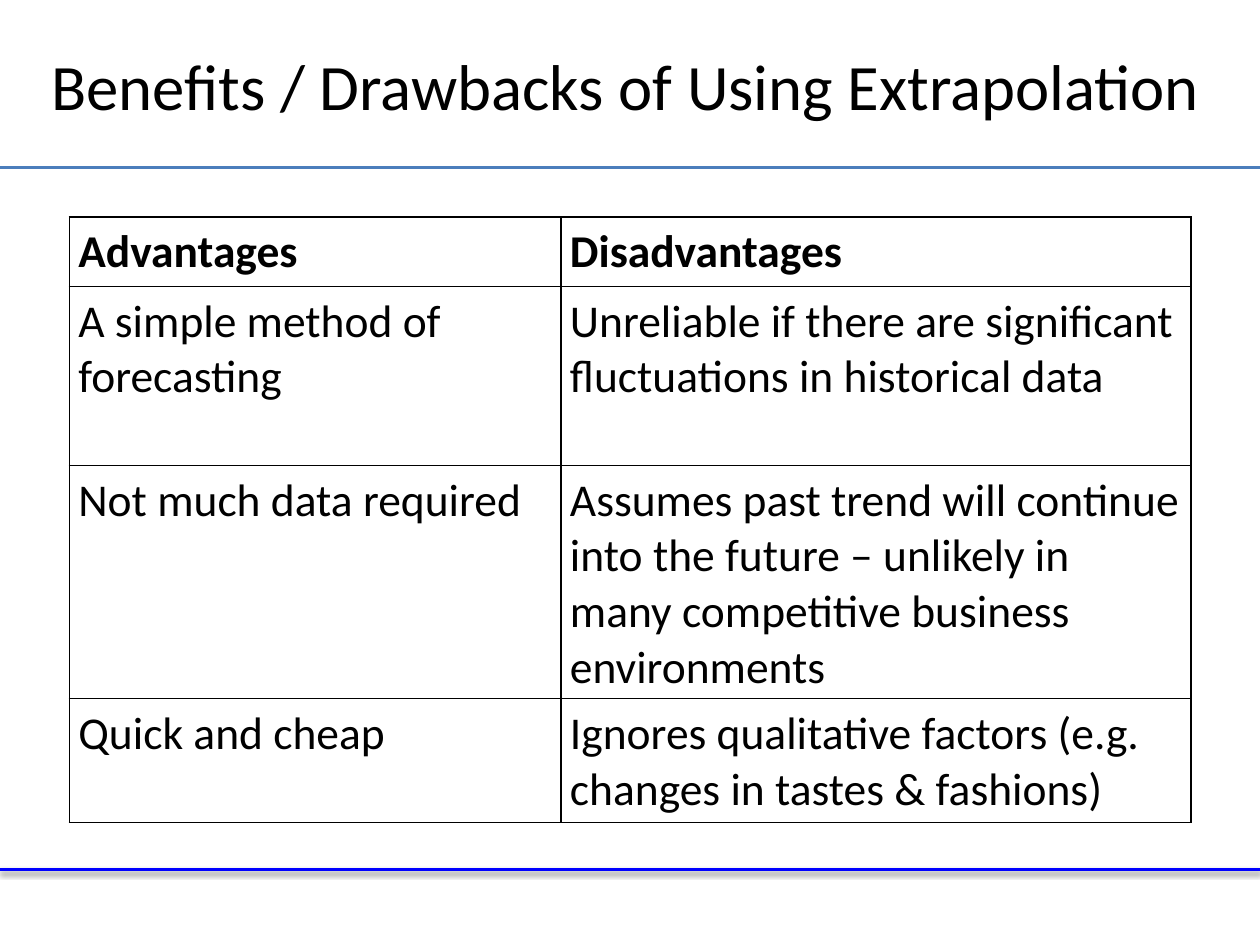
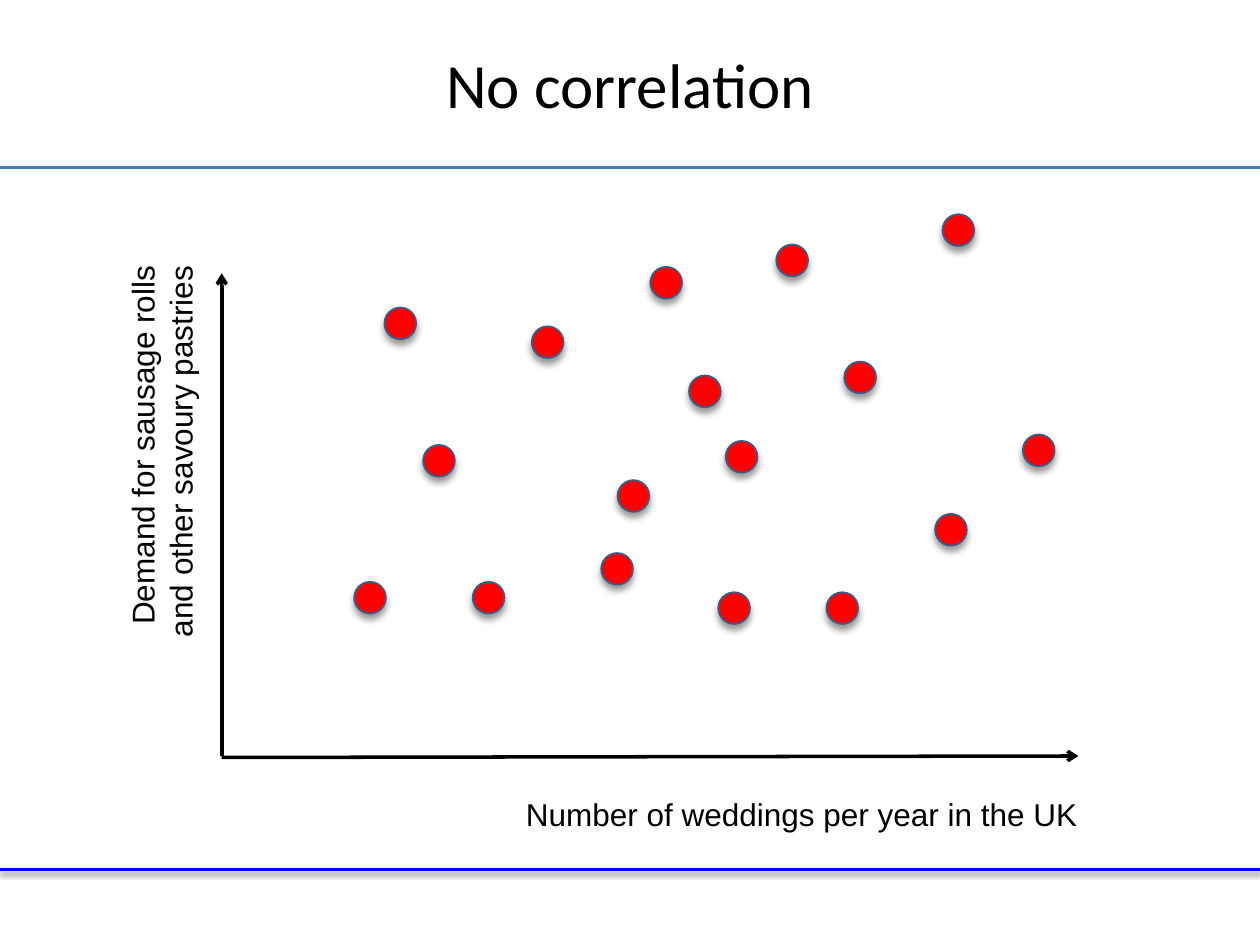
from lxml import etree
from pptx import Presentation
from pptx.dml.color import RGBColor
from pptx.enum.shapes import MSO_CONNECTOR, MSO_SHAPE
from pptx.enum.text import MSO_ANCHOR as Anchor, PP_ALIGN as Align
from pptx.oxml import parse_xml
from pptx.oxml.ns import nsdecls, qn
from pptx.util import Cm, Pt

COLORS = {
    "background": "FFFFFF",
    "text": "000000",
    "title_rule": "4B7EBC",
    "footer_rule": "0000FF",
    "dot": "FF0000",
    "dot_edge": "385D8A",
}
WIDTH, HEIGHT = 25.4, 19.05


def color(name):
    return RGBColor.from_string(COLORS[name])


class Deck:
    """Holds the shared style and the slide being filled; lengths are in cm."""

    heading_font = "Calibri"
    label_font = "Arial"

    def __init__(self):
        self.presentation = Presentation()
        self.presentation.slide_width = Cm(WIDTH)
        self.presentation.slide_height = Cm(HEIGHT)
        self.slide = None

    def new_slide(self, title, title_box, title_size):
        layout = self.presentation.slide_layouts[6]
        self.slide = self.presentation.slides.add_slide(layout)
        background = self.slide.background.fill
        background.solid()
        background.fore_color.rgb = color("background")
        self.line((0, 17.53), (WIDTH, 17.53), "footer_rule", 2,
                  shadow=(38, 3.1, 1.6))
        self.line((0, 3.38), (WIDTH, 3.38), "title_rule", 1.75)
        self.text(title, title_box, title_size, self.heading_font,
                  Align.CENTER, Anchor.MIDDLE)

    def set_effects(self, shape, shadow=None):
        """Replace inherited effects; shadow is (opacity %, blur pt, distance pt)."""
        properties = shape._element.spPr
        for old in properties.findall(qn("a:effectLst")):
            properties.remove(old)
        effects = etree.SubElement(properties, qn("a:effectLst"))
        if shadow:
            opacity, blur, distance = shadow
            effects.append(parse_xml(
                f'<a:outerShdw {nsdecls("a")} blurRad="{Pt(blur)}" '
                f'dist="{Pt(distance)}" dir="5400000" rotWithShape="0">'
                f'<a:srgbClr val="000000"><a:alpha val="{opacity * 1000}"/>'
                '</a:srgbClr></a:outerShdw>'))

    def line(self, start, end, color_name, width, shadow=None, arrow=False):
        connector = self.slide.shapes.add_connector(
            MSO_CONNECTOR.STRAIGHT, *map(Cm, start + end))
        connector.line.color.rgb = color(color_name)
        connector.line.width = Pt(width)
        if arrow:
            outline = connector._element.spPr.find(qn("a:ln"))
            etree.SubElement(outline, qn("a:tailEnd"), type="arrow")
        self.set_effects(connector, shadow)

    def style(self, paragraph, size, font_name, bold=False):
        font = paragraph.font
        font.size, font.name, font.bold = Pt(size), font_name, bold
        font.color.rgb = color("text")

    def text(self, words, box, size, font_name, align,
             anchor=Anchor.TOP, rotation=0):
        shape = self.slide.shapes.add_textbox(*map(Cm, box))
        shape.rotation = rotation
        frame = shape.text_frame
        frame.word_wrap = True
        frame.vertical_anchor = anchor
        paragraph = frame.paragraphs[0]
        paragraph.text = words
        paragraph.alignment = align
        self.style(paragraph, size, font_name)

    def border(self, cell):
        properties = cell._tc.get_or_add_tcPr()
        for index, side in enumerate("LRTB"):
            properties.insert(index, parse_xml(
                f'<a:ln{side} {nsdecls("a")} w="{Pt(1)}"><a:solidFill>'
                f'<a:srgbClr val="{COLORS["text"]}"/></a:solidFill></a:ln{side}>'))

    def table(self, left, top, column_widths, row_heights, rows):
        table = self.slide.shapes.add_table(
            len(rows), len(column_widths), Cm(left), Cm(top),
            Cm(sum(column_widths)), Cm(sum(row_heights))).table
        table.first_row = table.horz_banding = False
        for column, width in zip(table.columns, column_widths):
            column.width = Cm(width)
        for row_index, (row, height, words) in enumerate(
                zip(table.rows, row_heights, rows)):
            row.height = Cm(height)
            for cell, cell_text in zip(row.cells, words):
                cell.text = cell_text
                cell.margin_left = cell.margin_right = Cm(0.18)
                cell.margin_top = cell.margin_bottom = Cm(0.15)
                cell.fill.background()
                self.border(cell)
                self.style(cell.text_frame.paragraphs[0], 26,
                           self.heading_font, bold=row_index == 0)

    def dot(self, left, top, size=0.64):
        shape = self.slide.shapes.add_shape(
            MSO_SHAPE.OVAL, Cm(left), Cm(top), Cm(size), Cm(size))
        shape.fill.solid()
        shape.fill.fore_color.rgb = color("dot")
        shape.line.color.rgb = color("dot_edge")
        shape.line.width = Pt(1)
        self.set_effects(shape, (40, 4, 3))


def add_extrapolation_slide(deck):
    deck.new_slide("Benefits / Drawbacks of Using Extrapolation",
                   (0.2, 0.41, 24.82, 2.59), 37)
    deck.table(1.4, 4.37, (9.91, 12.7), (1.4, 3.61, 4.7, 2.49), [
        ("Advantages", "Disadvantages"),
        ("A simple method of forecasting",
         "Unreliable if there are significant fluctuations in historical data"),
        ("Not much data required",
         "Assumes past trend will continue into the future – unlikely in many "
         "competitive business environments"),
        ("Quick and cheap",
         "Ignores qualitative factors (e.g. changes in tastes & fashions)"),
    ])


def add_correlation_slide(deck):
    deck.new_slide("No correlation", (1.27, 0.2, 22.86, 2.97), 36)
    deck.line((4.47, 15.24), (4.47, 5.51), "text", 2, arrow=True)
    deck.line((4.47, 15.27), (21.74, 15.24), "text", 2, arrow=True)
    deck.text("Demand for sausage rolls and other savoury pastries",
              (-1.09, 8.56, 8.7, 1.8), 18, deck.label_font, Align.RIGHT,
              rotation=270)
    deck.text("Number of weddings per year in the UK",
              (9.09, 15.9, 12.88, 1.02), 18, deck.label_font, Align.RIGHT)
    observations = [
        (20.62, 8.76), (8.53, 8.97), (19, 4.32), (13.89, 7.57),
        (12.12, 11.15), (13.11, 5.38), (7.14, 11.73), (10.72, 6.58),
        (15.65, 4.93), (7.75, 6.2), (14.63, 8.89), (14.48, 11.94),
        (18.85, 10.36), (12.45, 9.68), (16.66, 11.94), (9.53, 11.73),
        (17.02, 7.29),
    ]
    for left, top in observations:
        deck.dot(left, top)


def main():
    deck = Deck()
    add_extrapolation_slide(deck)
    add_correlation_slide(deck)
    deck.presentation.save("out.pptx")


if __name__ == "__main__":
    main()
